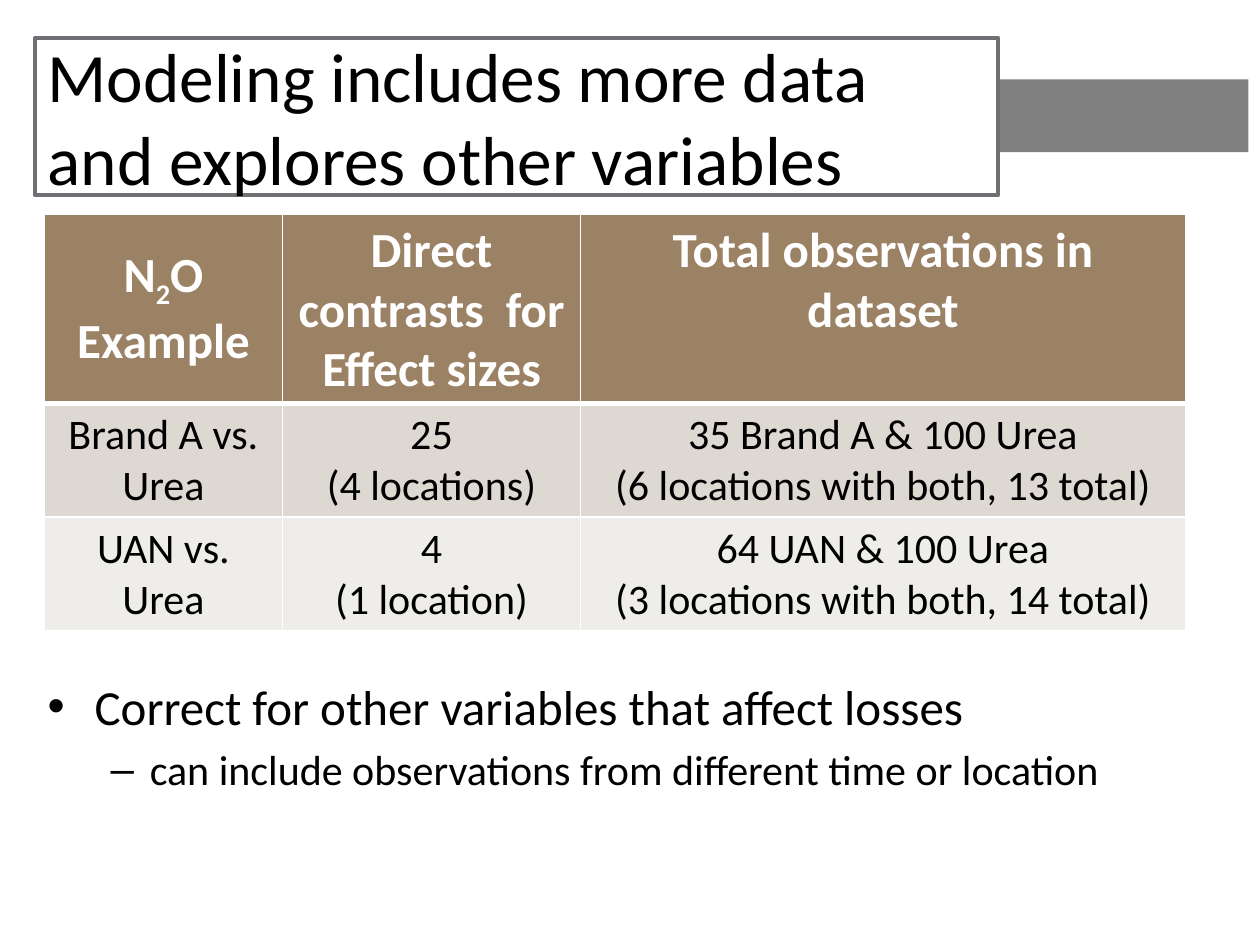
from lxml.etree import SubElement
from pptx import Presentation
from pptx.dml.color import RGBColor
from pptx.enum.shapes import MSO_SHAPE
from pptx.enum.text import MSO_ANCHOR, PP_ALIGN
from pptx.oxml import parse_xml
from pptx.oxml.ns import nsdecls, qn
from pptx.util import Cm, Pt

BLACK, WHITE = "000000", "FFFFFF"
HEADER_FILL = "9C8265"
ROW_FILLS = [HEADER_FILL, "DED8D3", "EFEDEA"]
ROW_HEIGHTS = [3.81, 2.29, 2.29]
COLUMN_WIDTHS = [4.81, 6, 12.2]
HEADER_FORMAT = {"size": Pt(28), "bold": True, "color": WHITE}
CELL_FORMAT = {"size": Pt(24), "bold": False, "color": BLACK}
ROWS = [
    [["N|2|O Example"], ["Direct contrasts  for Effect sizes"], ["Total observations in dataset"]],
    [["Brand A vs. Urea"], ["25", "(4 locations)"],
     ["35 Brand A & 100 Urea", "(6 locations with both, 13 total)"]],
    [["UAN vs. Urea"], ["4", "(1 location)"],
     ["64 UAN & 100 Urea", "(3 locations with both, 14 total)"]],
]
BULLETS = [
    ("Correct for other variables that affect losses", "•", 28, 0.95, 0.95, 0),
    ("can include observations from different time or location", "–", 24, 2.06, 0.79, 4.8),
]


def rgb(value):
    return RGBColor.from_string(value)


def format_font(font, values):
    for name, value in {"name": "Calibri", **values}.items():
        if name == "color":
            font.color.rgb = rgb(value)
        else:
            setattr(font, name, value)


def add_rectangle(slide, left, top, width, height, fill, line=None):
    shape = slide.shapes.add_shape(MSO_SHAPE.RECTANGLE, Cm(left), Cm(top), Cm(width), Cm(height))
    shape.shadow.inherit = False
    shape.fill.solid()
    shape.fill.fore_color.rgb = rgb(fill)
    if line:
        shape.line.color.rgb = rgb(line)
        shape.line.width = Pt(2.25)
    else:
        shape.line.fill.background()
    return shape


def add_title(slide, left, top, width, height):
    add_rectangle(slide, left + 15.6, top + 0.84, 8.86, 1.47, "808080")
    shape = add_rectangle(slide, left, top, width, height, WHITE, "6F6F74")
    frame = shape.text_frame
    frame.word_wrap = True
    frame.vertical_anchor = MSO_ANCHOR.MIDDLE
    paragraph = frame.paragraphs[0]
    paragraph.text = "Modeling includes more data\vand explores other variables"
    paragraph.alignment = PP_ALIGN.LEFT
    for run in paragraph.runs:
        format_font(run.font, {"size": Pt(39.6), "color": BLACK})


def set_borders(cell, bottom_width):
    properties = cell._tc.get_or_add_tcPr()
    widths = {"lnL": 1, "lnR": 1, "lnT": 1, "lnB": bottom_width}
    for index, (side, width) in enumerate(widths.items()):
        border = parse_xml(
            f'<a:{side} {nsdecls("a")} w="{Pt(width)}"><a:solidFill>'
            f'<a:srgbClr val="{WHITE}"/></a:solidFill></a:{side}>')
        properties.insert(index, border)


def fill_cell(cell, lines, values):
    frame = cell.text_frame
    for index, line in enumerate(lines):
        paragraph = frame.add_paragraph() if index else frame.paragraphs[0]
        paragraph.alignment = PP_ALIGN.CENTER
        for position, text in enumerate(line.split("|")):
            run = paragraph.add_run()
            run.text = text
            format_font(run.font, values)
            if position == 1:
                run._r.get_or_add_rPr().set("baseline", "-25000")


def add_comparison_table(slide, left, top):
    table = slide.shapes.add_table(
        len(ROWS), len(COLUMN_WIDTHS), Cm(left), Cm(top),
        Cm(sum(COLUMN_WIDTHS)), Cm(sum(ROW_HEIGHTS))).table
    for column, width in zip(table.columns, COLUMN_WIDTHS):
        column.width = Cm(width)
    for row_index, (row, height) in enumerate(zip(table.rows, ROW_HEIGHTS)):
        row.height = Cm(height)
        for cell, lines in zip(row.cells, ROWS[row_index]):
            cell.fill.solid()
            cell.fill.fore_color.rgb = rgb(ROW_FILLS[row_index])
            fill_cell(cell, lines, CELL_FORMAT if row_index else HEADER_FORMAT)
            set_borders(cell, 1 if row_index else 3)
    table.cell(0, 0).vertical_anchor = MSO_ANCHOR.MIDDLE


def add_bullets(slide, left, top, width, height):
    frame = slide.shapes.add_textbox(Cm(left), Cm(top), Cm(width), Cm(height)).text_frame
    frame.word_wrap = True
    for index, (text, bullet, size, margin, hanging, space) in enumerate(BULLETS):
        paragraph = frame.add_paragraph() if index else frame.paragraphs[0]
        paragraph.text = text
        paragraph.level = index
        paragraph.space_before = Pt(space)
        properties = paragraph._p.get_or_add_pPr()
        properties.set("marL", str(Cm(margin)))
        properties.set("indent", str(-Cm(hanging)))
        SubElement(properties, qn("a:buFont"), typeface="Arial")
        SubElement(properties, qn("a:buChar"), char=bullet)
        format_font(paragraph.runs[0].font, {"size": Pt(size), "color": BLACK})


def main():
    presentation = Presentation()
    presentation.slide_width, presentation.slide_height = Cm(25.4), Cm(19.05)
    slide = presentation.slides.add_slide(presentation.slide_layouts[6])
    add_title(slide, 0.71, 0.76, 19.41, 3.18)
    add_bullets(slide, 0.71, 13.51, 24, 3.2)
    add_comparison_table(slide, 0.89, 4.32)
    presentation.save("out.pptx")


if __name__ == "__main__":
    main()
